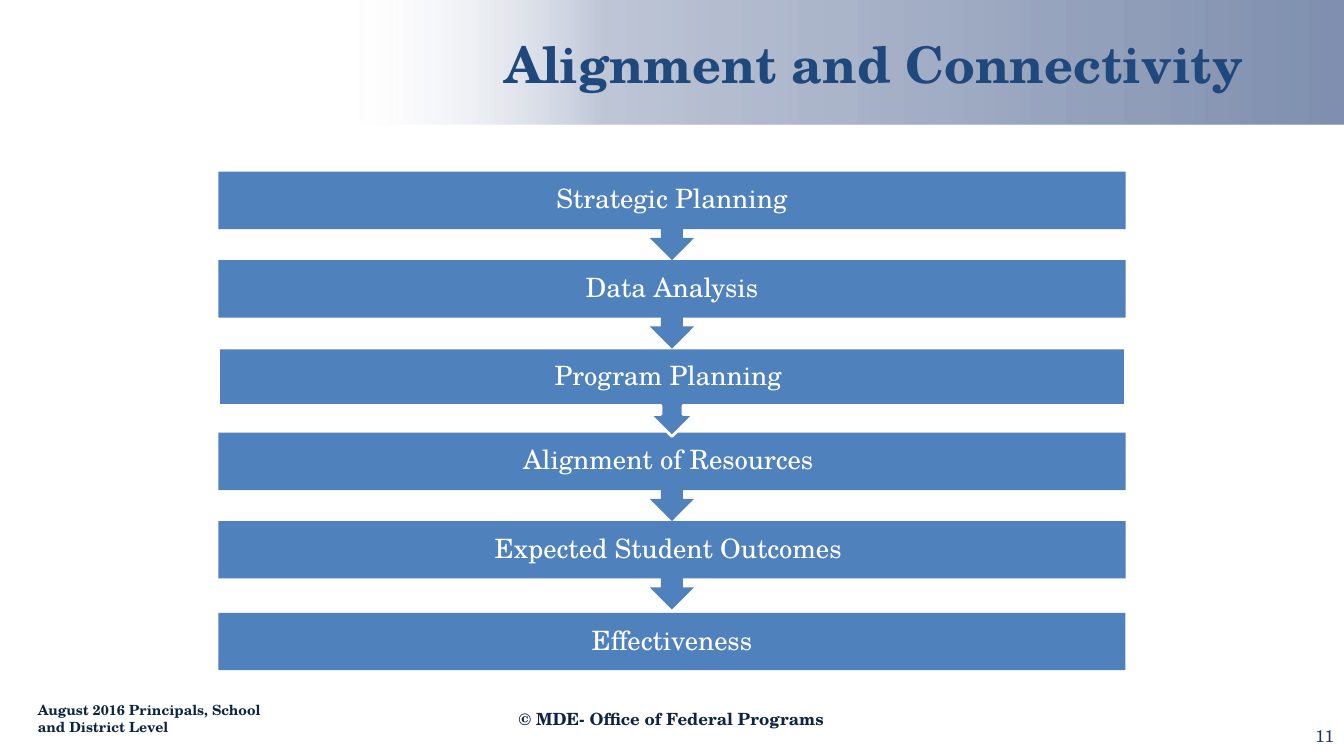
from lxml import etree
from pptx import Presentation
from pptx.dml.color import RGBColor
from pptx.enum import shapes, text
from pptx.oxml import ns
from pptx.util import Pt

FONT = "TeX Gyre Schola"
WHITE = RGBColor(0xFF, 0xFF, 0xFF)
BLUE = RGBColor(0x4F, 0x81, 0xBD)
TITLE = RGBColor(0x1F, 0x49, 0x7D)
DARK = RGBColor(0x0F, 0x24, 0x3E)
NAVY = RGBColor(0x22, 0x32, 0x64)
DEEP = RGBColor(0x00, 0x20, 0x60)
LEFT, CENTER, RIGHT = text.PP_ALIGN.LEFT, text.PP_ALIGN.CENTER, text.PP_ALIGN.RIGHT
KIND = shapes.MSO_SHAPE


def write(shape, words, size, color, align, bold=False):
    frame = shape.text_frame
    frame.word_wrap = True
    frame.vertical_anchor = text.MSO_ANCHOR.MIDDLE
    frame.text = words
    para = frame.paragraphs[0]
    para.alignment = align
    font = para.runs[0].font
    font.name, font.size, font.bold = FONT, Pt(size), bold
    font.color.rgb = color


deck = Presentation()
deck.slide_width, deck.slide_height = Pt(960), Pt(540)
slide = deck.slides.add_slide(deck.slide_layouts[6])

band = slide.shapes.add_shape(KIND.RECTANGLE, Pt(0), Pt(-1.44), Pt(960), Pt(90))
band.shadow.inherit = False
band.line.fill.background()
band.fill.gradient()
band.fill.gradient_angle = 0
stops = band.fill._fill._gradFill.find(ns.qn("a:gsLst"))
for stop in list(stops):
    stops.remove(stop)
for pos, color, alpha in [(0, WHITE, 0), (25, WHITE, 0), (45, DEEP, 25), (100, DEEP, 50)]:
    stop = etree.SubElement(stops, ns.qn("a:gs"), pos=str(pos * 1000))
    tint = etree.SubElement(stop, ns.qn("a:srgbClr"), val=str(color))
    etree.SubElement(tint, ns.qn("a:alpha"), val=str(alpha * 1000))

steps = [
    ("Effectiveness", 437.8),
    ("Expected Student Outcomes ", 372.2),
    ("Alignment of Resources ", 309),
    ("Program Planning ", 248.6),
    ("Data Analysis", 185.8),
    ("Strategic Planning", 122.6),
]
for words, top in steps:
    last = words == "Effectiveness"
    kind = KIND.RECTANGLE if last else KIND.DOWN_ARROW_CALLOUT
    step = slide.shapes.add_shape(kind, Pt(156), Pt(top), Pt(648), Pt(41 if last else 63.2))
    step.shadow.inherit = False
    step.fill.solid()
    step.fill.fore_color.rgb = BLUE
    if words.startswith("Program"):
        step.line.color.rgb = WHITE
        step.line.width = Pt(2)
    else:
        step.line.fill.background()
    write(step, words, 19, WHITE, CENTER)
    frame = step.text_frame
    frame.margin_left = frame.margin_right = Pt(10.8)
    frame.margin_top = frame.margin_bottom = Pt(10.8)
    frame.paragraphs[0].line_spacing = 0.9

labels = [
    ("Alignment and Connectivity", 288, 0, 672, 90, 36, TITLE, CENTER, True),
    ("August 2016 Principals, School and District Level", 20, 493.2, 194.4, 39.6, 10, DARK, LEFT, True),
    ("11", 736, 511.2, 224, 28.8, 12, NAVY, RIGHT, False),
    ("© MDE- Office of Federal Programs", 327.6, 499, 304, 28.8, 12, DARK, CENTER, True),
]
for words, left, top, width, height, size, color, align, bold in labels:
    box = slide.shapes.add_textbox(Pt(left), Pt(top), Pt(width), Pt(height))
    write(box, words, size, color, align, bold)

deck.save("out.pptx")
